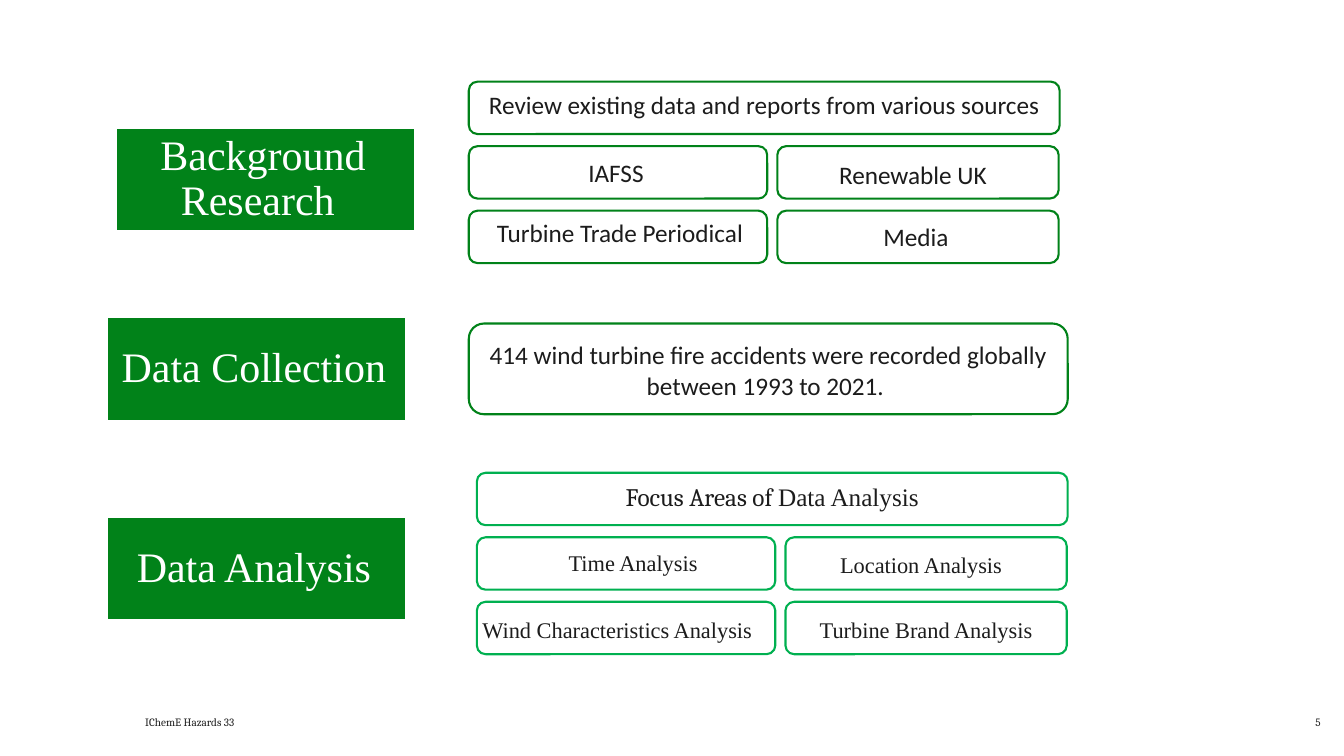
from pptx import Presentation
from pptx.dml.color import RGBColor
from pptx.enum.shapes import MSO_SHAPE
from pptx.enum.text import MSO_ANCHOR, PP_ALIGN
from pptx.util import Pt

PX = 9144  # 100 px to the inch
COLORS = {"green": "018219", "lime": "00B050", "ink": "1C1C1C", "white": "FFFFFF"}
SERIF, SANS, BODY = "Times New Roman", "Calibri", "Cambria"
LEFT, MID, RIGHT = PP_ALIGN.LEFT, PP_ALIGN.CENTER, PP_ALIGN.RIGHT

# Stage labels: text, left, top
STAGES = [
    ("Background Research ", 115, 127),
    ("Data Collection", 106, 315),
    ("Data Analysis", 106, 513),
]

# Box grids: left, top, line colour, font, cells
# Cell: row, column (None spans both), runs, size, align, text shift x and y
GRIDS = [
    (465, 81, "green", SANS, [
        (0, None, ["Review existing data and reports from various sources"], 18, MID, 0, -3),
        (1, 0, ["IAFSS"], 18, MID, -2, 0),
        (1, 1, ["Renewable UK"], 18, MID, -5, 2),
        (2, 0, ["Turbine Trade Periodical"], 18, MID, 2, -4),
        (2, 1, ["Media"], 18, MID, -2, 0),
    ]),
    (473, 469, "lime", SERIF, [
        (0, None, [("Focus Areas of ", BODY), "Data Analysis"], 18, MID, 0, -3),
        (1, 0, ["Time Analysis"], 16, MID, 7, -1),
        (1, 1, ["Location Analysis"], 16, MID, -5, 1),
        (2, 0, ["Wind Characteristics Analysis"], 16, LEFT, 0, 2),
        (2, 1, ["Turbine Brand Analysis"], 16, MID, 0, 2),
    ]),
]
COLS = [(0, 296), (306, 279)]  # offset, width
WIDE, HIGH, STEP, PAD = 586, 52, 64, 3

RECORD = "414 wind turbine fire accidents were recorded globally between 1993 to 2021. "

# Footer: text, left, width, align
FOOTER = [("IChemE Hazards 33", 144, 512, LEFT), ("5", 1251, 59, RIGHT)]

deck = Presentation()
deck.slide_width, deck.slide_height = 1333 * PX, 750 * PX
slide = deck.slides.add_slide(deck.slide_layouts[6])


def rgb(name):
    return RGBColor.from_string(COLORS[name])


def write(shape, runs, font, size, color, align, insets, anchor=MSO_ANCHOR.MIDDLE):
    frame = shape.text_frame
    frame.word_wrap = True
    frame.vertical_anchor = anchor
    (frame.margin_left, frame.margin_top,
     frame.margin_right, frame.margin_bottom) = [n * PX for n in insets]
    para = frame.paragraphs[0]
    para.alignment = align
    para.font.name, para.font.size = font, Pt(size)
    para.font.color.rgb = rgb(color)
    for item in runs:
        text, face = (item, None) if isinstance(item, str) else item
        run = para.add_run()
        run.text = text
        if face:
            run.font.name = face
    return para


def draw(kind, box, line, width, fill=None):
    shape = slide.shapes.add_shape(kind, *[n * PX for n in box])
    shape.shadow.inherit = False
    shape.line.color.rgb = rgb(line)
    shape.line.width = Pt(width)
    if fill:
        shape.fill.solid()
        shape.fill.fore_color.rgb = rgb(fill)
    else:
        shape.fill.background()
    return shape


def outline(box, line, runs, font, size, align, dx, dy):
    # Twice the shift on one side moves the text by the shift
    insets = [PAD + max(0, 2 * n) for n in (dx, dy, -dx, -dy)]
    shape = draw(MSO_SHAPE.ROUNDED_RECTANGLE, box, line, 1.5)
    write(shape, runs, font, size, "ink", align, insets)


# Stage labels
for text, left, top in STAGES:
    label = draw(MSO_SHAPE.RECTANGLE, (left, top, 296, 102), "white", 1, "green")
    para = write(label, [text], SERIF, 30, "white", MID, (4, 8, 8, 8))
    para.line_spacing = 0.9

# Box grids
for left, top, line, font, cells in GRIDS:
    for row, col, runs, size, align, dx, dy in cells:
        shift, width = (0, WIDE) if col is None else COLS[col]
        box = (left + shift, top + row * STEP, width, HIGH)
        outline(box, line, runs, font, size, align, dx, dy)

# Collected data
outline((465, 321, 594, 90), "green", [RECORD], SANS, 18, MID, 0, 1)

# Footer and page number
for text, left, width, align in FOOTER:
    note = slide.shapes.add_textbox(left * PX, 703 * PX, width * PX, 20 * PX)
    write(note, [text], BODY, 8, "ink", align, (0, 0, 0, 0), MSO_ANCHOR.BOTTOM)

deck.save("out.pptx")
